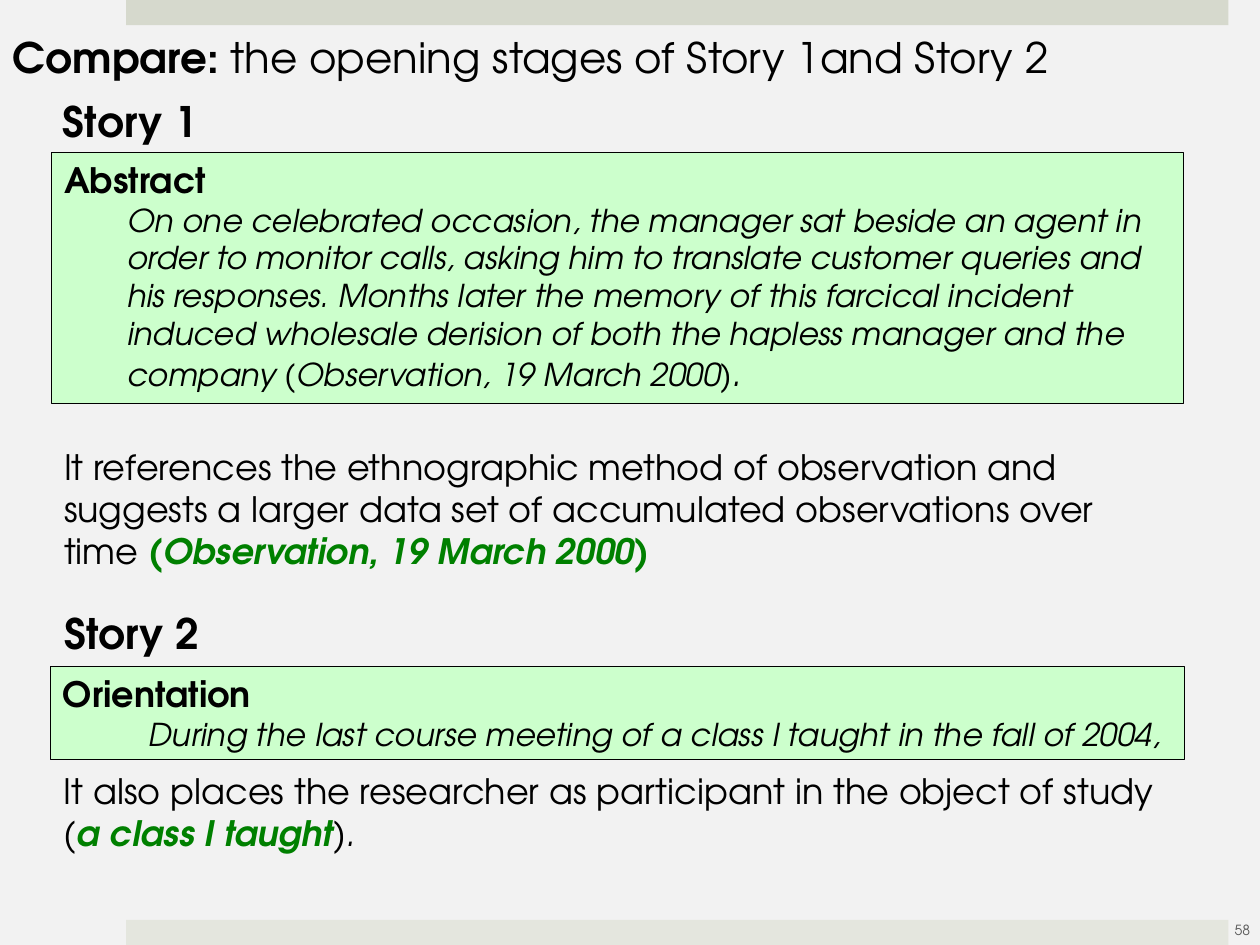
"""Build a slide comparing the opening stages of two stories."""
from pptx import Presentation
from pptx.dml.color import RGBColor
from pptx.enum.shapes import MSO_SHAPE
from pptx.enum.text import MSO_ANCHOR, MSO_AUTO_SIZE, PP_ALIGN
from pptx.util import Pt

FONT = "TeX Gyre Adventor"
COLORS = {
    "background": "F2F2F2",
    "top bar": "D6D9CD",
    "bottom bar": "E4E6DE",
    "panel": "CCFFCC",
    "text": "000000",
    "highlight": "008000",
    "number": "595959",
}


def add_rectangle(page, left, top, width, height, color):
    box = page.shapes.add_shape(
        MSO_SHAPE.RECTANGLE, Pt(left), Pt(top), Pt(width), Pt(height))
    box.shadow.inherit = False
    box.fill.solid()
    box.fill.fore_color.rgb = RGBColor.from_string(COLORS[color])
    box.line.fill.background()
    return box


def write(box, paragraphs, align=PP_ALIGN.LEFT, anchor=MSO_ANCHOR.TOP):
    frame = box.text_frame
    frame.word_wrap = True
    frame.auto_size = MSO_AUTO_SIZE.NONE
    frame.vertical_anchor = anchor
    for index, (indent, spans) in enumerate(paragraphs):
        para = frame.add_paragraph() if index else frame.paragraphs[0]
        para.alignment = align
        properties = para._p.get_or_add_pPr()
        properties.set("marL", str(Pt(indent)))
        properties.set("indent", "0")
        for text, size, style, color in spans:
            span = para.add_run()
            span.text = text
            span.font.name = FONT
            span.font.size = Pt(size)
            span.font.bold = "b" in style
            span.font.italic = "i" in style
            span.font.color.rgb = RGBColor.from_string(COLORS[color])


deck = Presentation()
deck.slide_width, deck.slide_height = Pt(720), Pt(540)
page = deck.slides.add_slide(deck.slide_layouts[5])
page.background.fill.solid()
page.background.fill.fore_color.rgb = RGBColor.from_string(COLORS["background"])

add_rectangle(page, 72, 0, 630, 14.4, "top bar")
add_rectangle(page, 72, 525.6, 630, 14.4, "bottom bar")

title = page.shapes.title
title.left, title.top, title.width, title.height = Pt(0), Pt(14.4), Pt(652), Pt(36)
write(title, [(0, [
    ("Compare: ", 24, "b", "text"),
    ("the opening stages of Story 1and Story 2", 24, "", "text"),
])])

panels = [
    (29.5, 87.1, 647, 143.3, "Abstract", 36, [
        ("On one celebrated occasion, the manager sat beside an agent in order to "
         "monitor calls, asking him to translate customer queries and his responses. "
         "Months later the memory of this farcical incident induced wholesale derision "
         "of both the hapless manager and the company (Observation, 19 March 2000)",
         18, "i", "text"),
        (".", 20, "i", "text"),
    ]),
    (28.8, 380.9, 648, 53.3, "Orientation", 49, [
        ("During the last course meeting of a class I taught in the fall of 2004,",
         18, "i", "text"),
    ]),
]
for left, top, width, height, stage, indent, quote in panels:
    panel = add_rectangle(page, left, top, width, height, "panel")
    panel.line.color.rgb = RGBColor.from_string(COLORS["text"])
    panel.line.width = Pt(0.75)
    write(panel, [(0, [(stage, 20, "b", "text")]), (indent, quote)])

texts = [
    (28.8, 51.1, 123, 36, [("Story 1", 24, "b", "text")]),
    (29.5, 251.3, 647, 80, [
        ("It references the ethnographic method of observation and suggests a larger "
         "data set of accumulated observations over time ", 20, "", "text"),
        ("(Observation, 19 March 2000", 20, "bi", "highlight"),
        (")", 20, "b", "highlight"),
    ]),
    (29.5, 343.4, 123, 36, [("Story 2", 24, "b", "text")]),
    (29.5, 436.3, 648, 55.4, [
        ("It also places the researcher as participant in the object of study (",
         20, "", "text"),
        ("a class I taught", 20, "bi", "highlight"),
        (").", 20, "i", "text"),
    ]),
]
for left, top, width, height, spans in texts:
    box = page.shapes.add_textbox(Pt(left), Pt(top), Pt(width), Pt(height))
    write(box, [(0, spans)])

number = page.shapes.add_textbox(Pt(691.9), Pt(517), Pt(36), Pt(28.8))
write(number, [(0, [("58", 8, "", "number")])], PP_ALIGN.CENTER, MSO_ANCHOR.MIDDLE)

deck.save("out.pptx")
